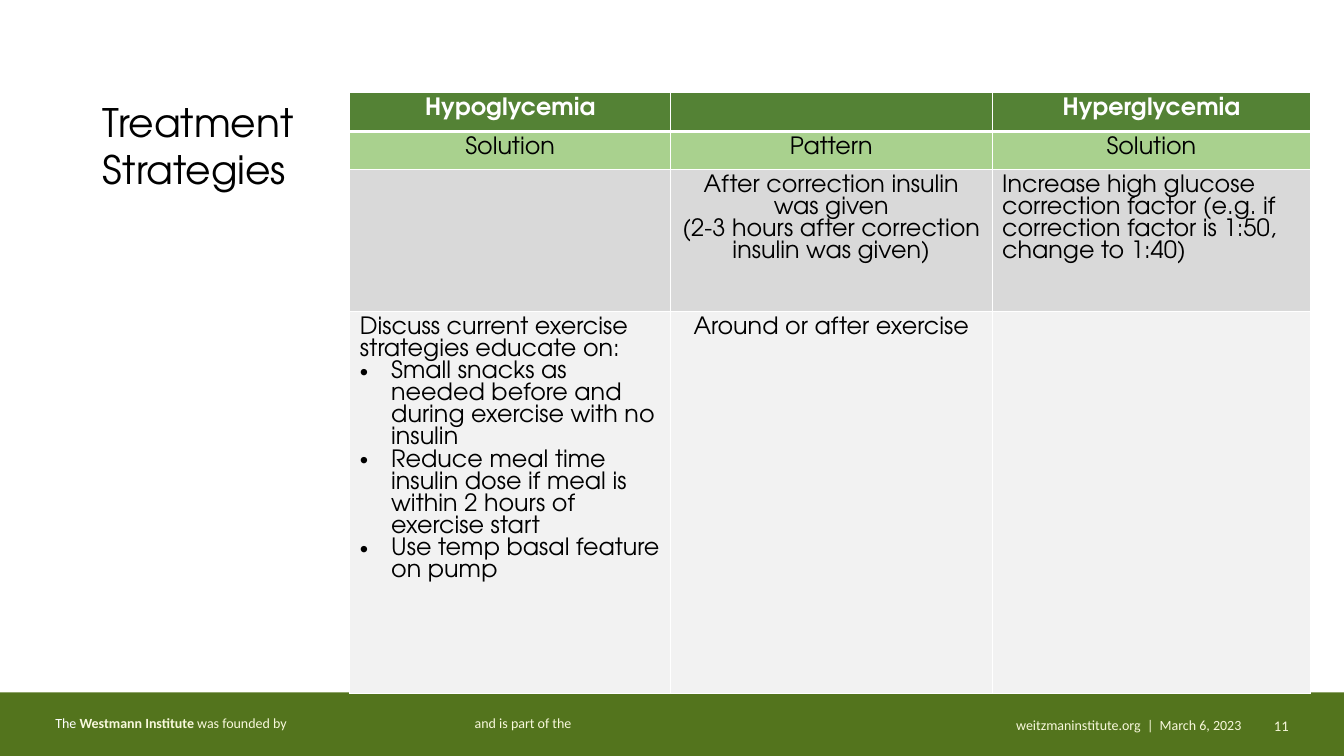
from lxml.etree import SubElement
from pptx import Presentation
from pptx.dml.color import RGBColor
from pptx.enum.shapes import MSO_SHAPE
from pptx.enum.text import MSO_ANCHOR, PP_ALIGN
from pptx.oxml import parse_xml
from pptx.oxml.ns import nsdecls, qn
from pptx.util import Inches, Pt

WHITE = RGBColor(0xFF, 0xFF, 0xFF)
BLACK = RGBColor(0x00, 0x00, 0x00)
CREAM = RGBColor(0xF8, 0xF8, 0xDC)
BAND_GREEN = RGBColor(0x53, 0x74, 0x1D)
HEADER_GREEN = RGBColor(0x54, 0x82, 0x35)
LIGHT_GREEN = RGBColor(0xA9, 0xD1, 0x8E)
GREY = RGBColor(0xD9, 0xD9, 0xD9)
PALE_GREY = RGBColor(0xF2, 0xF2, 0xF2)

BODY_FONT = "TeX Gyre Adventor"
FOOTER_FONT = "Calibri"
LEFT, CENTER, RIGHT = PP_ALIGN.LEFT, PP_ALIGN.CENTER, PP_ALIGN.RIGHT

COLUMN_WIDTHS = [3.18, 3.19, 3.16]
ROW_HEIGHTS = [0.37, 0.38, 1.41, 3.79]
ROW_FILLS = [HEADER_GREEN, LIGHT_GREEN, GREY, PALE_GREY]
# Each cell holds its paragraphs; a leading bullet marks a list item
ROWS = [
    [["Hypoglycemia"], [""], ["Hyperglycemia"]],
    [["Solution"], ["Pattern"], ["Solution"]],
    [[""],
     ["After correction insulin was given",
      "(2-3 hours after correction insulin was given)"],
     ["Increase high glucose correction factor "
      "(e.g. if correction factor is 1:50, change to 1:40)"]],
    [["Discuss current exercise strategies educate on:",
      "•Small snacks as needed before and during exercise with no insulin",
      "•Reduce meal time insulin dose if meal is within 2 hours of exercise start",
      "•Use temp basal feature on pump"],
     ["Around or after exercise"], [""]],
]


def set_font(font, name, size, color, bold=False):
    font.name, font.size, font.bold = name, Pt(size), bold
    font.color.rgb = color


def add_title(slide, left, top, width, height):
    title = slide.shapes.title
    title.left, title.top = Inches(left), Inches(top)
    title.width, title.height = Inches(width), Inches(height)
    title.text_frame.text = "Treatment Strategies"
    title.text_frame.word_wrap = True
    title.text_frame.vertical_anchor = MSO_ANCHOR.MIDDLE
    paragraph = title.text_frame.paragraphs[0]
    paragraph.alignment = LEFT
    paragraph.line_spacing = Pt(33.6)
    set_font(paragraph.font, BODY_FONT, 28, BLACK)


def add_bullet(paragraph):
    properties = paragraph._p.get_or_add_pPr()
    properties.set("marL", str(Inches(0.31)))
    properties.set("indent", str(-Inches(0.31)))
    SubElement(properties, qn("a:buFont")).set("typeface", "Arial")
    SubElement(properties, qn("a:buChar")).set("char", "•")


def set_borders(cell, top, bottom):
    """White lines round a cell; top and bottom widths in points."""
    properties = cell._tc.get_or_add_tcPr()
    sides = [("lnL", 1), ("lnR", 1), ("lnT", top), ("lnB", bottom)]
    for position, (side, width) in enumerate(sides):
        properties.insert(position, parse_xml(
            f'<a:{side} {nsdecls("a")} w="{Pt(width)}"><a:solidFill>'
            f'<a:srgbClr val="{WHITE}"/></a:solidFill></a:{side}>'))


def fill_cell(cell, lines, alignment, color, bold):
    frame = cell.text_frame
    for index, line in enumerate(lines):
        paragraph = frame.paragraphs[0] if index == 0 else frame.add_paragraph()
        paragraph.text = line.removeprefix("•")
        paragraph.alignment = alignment
        paragraph.line_spacing = Pt(15.8)
        if line.startswith("•"):
            add_bullet(paragraph)
        set_font(paragraph.font, BODY_FONT, 17, color, bold)


def add_strategy_table(slide, left, top):
    table = slide.shapes.add_table(
        len(ROW_HEIGHTS), len(COLUMN_WIDTHS), Inches(left), Inches(top),
        Inches(sum(COLUMN_WIDTHS)), Inches(sum(ROW_HEIGHTS))).table
    for column, width in zip(table.columns, COLUMN_WIDTHS):
        column.width = Inches(width)
    for row_index, row_cells in enumerate(ROWS):
        table.rows[row_index].height = Inches(ROW_HEIGHTS[row_index])
        header = row_index == 0
        for column_index, lines in enumerate(row_cells):
            cell = table.cell(row_index, column_index)
            cell.fill.solid()
            cell.fill.fore_color.rgb = ROW_FILLS[row_index]
            set_borders(cell, 3 if row_index == 1 else 1, 3 if header else 1)
            centered = row_index < 2 or column_index == 1
            fill_cell(cell, lines, CENTER if centered else LEFT,
                      WHITE if header else BLACK, header)


def add_footer_text(slide, box, parts, size, alignment, tab=None):
    """One line of text; parts are (text, colour, bold)."""
    frame = slide.shapes.add_textbox(*map(Inches, box)).text_frame
    frame.word_wrap = True
    paragraph = frame.paragraphs[0]
    paragraph.alignment = alignment
    if tab:
        tabs = SubElement(paragraph._p.get_or_add_pPr(), qn("a:tabLst"))
        stop = SubElement(tabs, qn("a:tab"))
        stop.set("pos", str(Inches(tab)))
        stop.set("algn", "l")
    set_font(paragraph.font, FOOTER_FONT, size, CREAM)
    for text, color, bold in parts:
        run = paragraph.add_run()
        run.text = text
        if color != CREAM:
            run.font.color.rgb = color
        if bold:
            run.font.bold = True


def add_footer(slide, left, top, width, height):
    band = slide.shapes.add_shape(
        MSO_SHAPE.RECTANGLE, Inches(left), Inches(top), Inches(width), Inches(height))
    band.shadow.inherit = False
    band.fill.solid()
    band.fill.fore_color.rgb = BAND_GREEN
    band.line.fill.background()
    add_footer_text(slide, (left + 0.45, top + 0.17, 7.99, 0.27),
                    [("The ", WHITE, False), ("Westmann Institute ", CREAM, True),
                     ("was founded by\tand is part of the", CREAM, False)],
                    10, LEFT, tab=4.16)
    add_footer_text(slide, (left + 9.81, top + 0.19, 2.6, 0.26),
                    [("weitzmaninstitute.org  |  March 6, 2023", CREAM, False)], 10, RIGHT)
    add_footer_text(slide, (left + 11.9, top + 0.19, 0.98, 0.36),
                    [("11", CREAM, False)], 10.5, RIGHT)


def main():
    presentation = Presentation()
    presentation.slide_width, presentation.slide_height = Inches(13.33), Inches(7.5)
    slide = presentation.slides.add_slide(presentation.slide_layouts[5])
    add_footer(slide, 0, 6.87, 13.33, 0.63)
    add_strategy_table(slide, 3.47, 0.92)
    add_title(slide, 0.92, 0.92, 3.72, 1.04)
    presentation.save("out.pptx")


if __name__ == "__main__":
    main()
